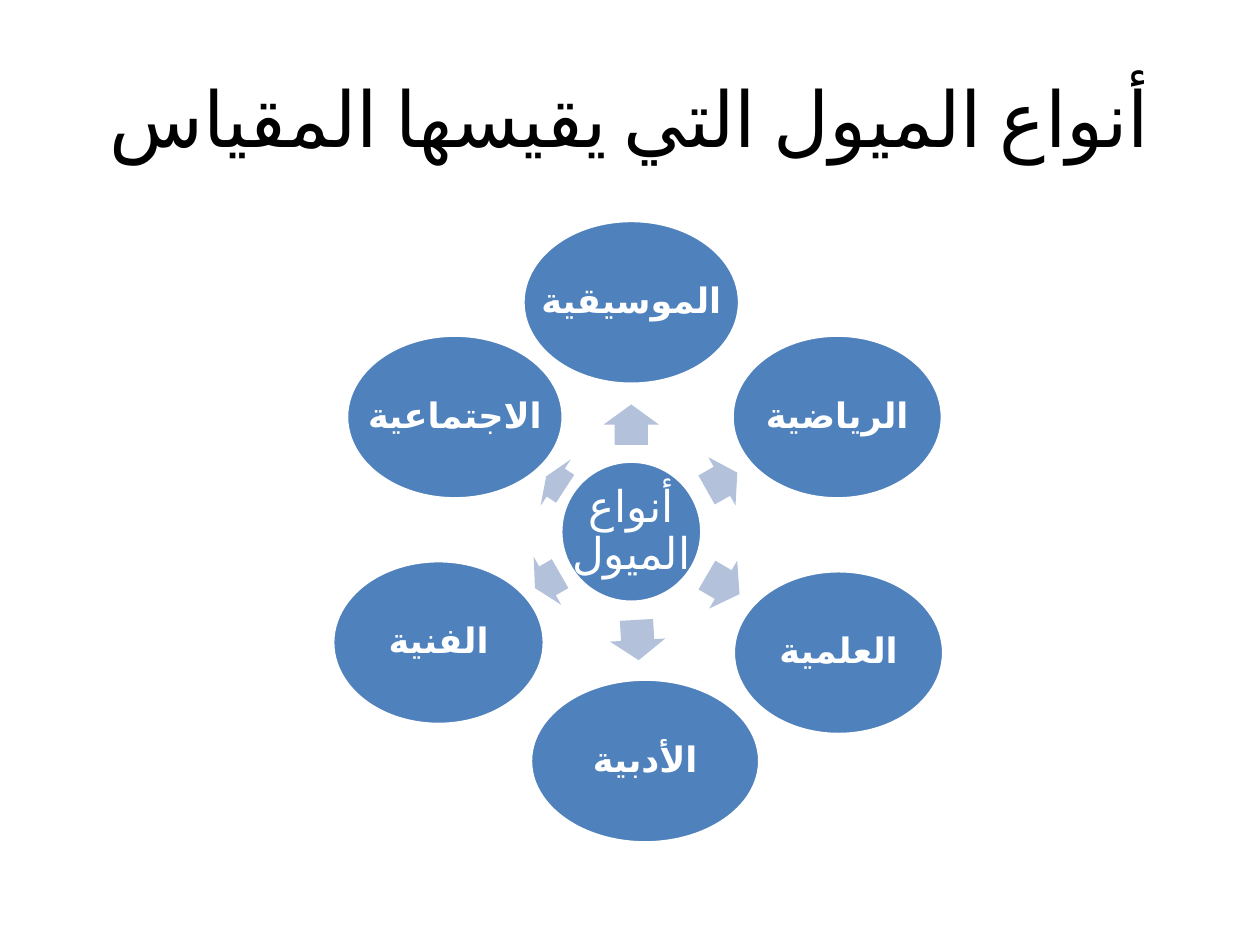
"""Builds a slide with six kinds of interest set around a central hub."""
from dataclasses import dataclass
from lxml.etree import SubElement as Sub
from pptx import Presentation
from pptx.dml.color import RGBColor as Rgb
from pptx.enum.shapes import MSO_SHAPE as Geo
from pptx.enum.text import MSO_ANCHOR as Anchor, PP_ALIGN as Align
from pptx.oxml.ns import qn
from pptx.util import Inches, Pt


@dataclass(frozen=True)
class Theme:
    font: str = "Calibri"
    lang: str = "ar-SA"
    ink: str = "000000"
    white: str = "FFFFFF"
    blue: str = "4F81BD"
    pale: str = "B3C1DB"
    title: int = 44
    hub: int = 25
    node: int = 20
    edge: int = 2
    pad: float = 0.03


def apply(item, form):
    for name, value in form.items():
        setattr(item, name, value)


class Board:
    def __init__(self, slide, theme):
        self.slide, self.theme = slide, theme
        self.shapes = slide.shapes

    def group(self):
        self.shapes = self.slide.shapes.add_group_shape().shapes

    def text(self, words, box, size, color, bold=False, pad=None, rtl=False):
        frame = self.shapes.add_textbox(*map(Inches, box)).text_frame
        apply(frame, {"word_wrap": True, "vertical_anchor": Anchor.MIDDLE})
        if pad is not None:
            sides = ("left", "top", "right", "bottom")
            apply(frame, {f"margin_{side}": Inches(pad) for side in sides})
        para = frame.paragraphs[0]
        para.alignment = Align.CENTER
        if rtl:
            para.line_spacing = 0.9
            para._p.get_or_add_pPr().set("rtl", "1")
        run = para.add_run()
        run.text = words
        apply(run.font, {"name": self.theme.font, "size": Pt(size), "bold": bold})
        run.font.color.rgb = Rgb.from_string(color)
        props = run._r.get_or_add_rPr()
        props.set("lang", self.theme.lang)
        Sub(props, qn("a:cs")).set("typeface", self.theme.font)

    def shape(self, kind, box, color):
        item = self.shapes.add_shape(kind, *map(Inches, box))
        item.shadow.inherit = False
        item.fill.solid()
        item.fill.fore_color.rgb = Rgb.from_string(color)
        return item

    def disc(self, words, box, size, bold=False):
        look = self.theme
        line = self.shape(Geo.OVAL, box, look.blue).line
        line.color.rgb = Rgb.from_string(look.white)
        line.width = Pt(look.edge)
        self.text(words, box, size, look.white, bold, look.pad, rtl=True)

    def arrow(self, left, top, width, turn):
        box = (left, top, width, 0.44)
        item = self.shape(Geo.RIGHT_ARROW, box, self.theme.pale)
        item.line.fill.background()
        item.rotation = turn
        item.adjustments[0], item.adjustments[1] = 0.6, 0.5


NODES = [
    ("الموسيقية", (4.15, 1.75, 1.72), (4.85, 3.15, 0.32, 270)),
    ("الرياضية", (5.81, 2.66, 1.67), (5.59, 3.6, 0.28, 330.6)),
    ("العلمية", (5.82, 4.53, 1.67), (5.59, 4.42, 0.3, 30.3)),
    ("الأدبية", (4.21, 5.39, 1.82), (4.9, 4.86, 0.32, 86.7)),
    ("الفنية", (2.64, 4.45, 1.68), (4.23, 4.39, 0.23, 150.1)),
    ("الاجتماعية", (2.75, 2.66, 1.72), (4.32, 3.61, 0.18, 213.1)),
]


def main():
    deck = Presentation()
    apply(deck, {"slide_width": Inches(10), "slide_height": Inches(7.5)})
    look = Theme()
    board = Board(deck.slides.add_slide(deck.slide_layouts[6]), look)
    board.text("أنواع الميول التي يقيسها المقياس", (0.5, 0.3, 9, 1.25),
               look.title, look.ink)
    board.group()
    board.disc("أنواع الميول", (4.45, 3.66, 1.12, 1.12), look.hub)
    for words, place, arrow in NODES:
        board.arrow(*arrow)
        board.disc(words, (*place, 1.3), look.node, bold=True)
    deck.save("out.pptx")


if __name__ == "__main__":
    main()
